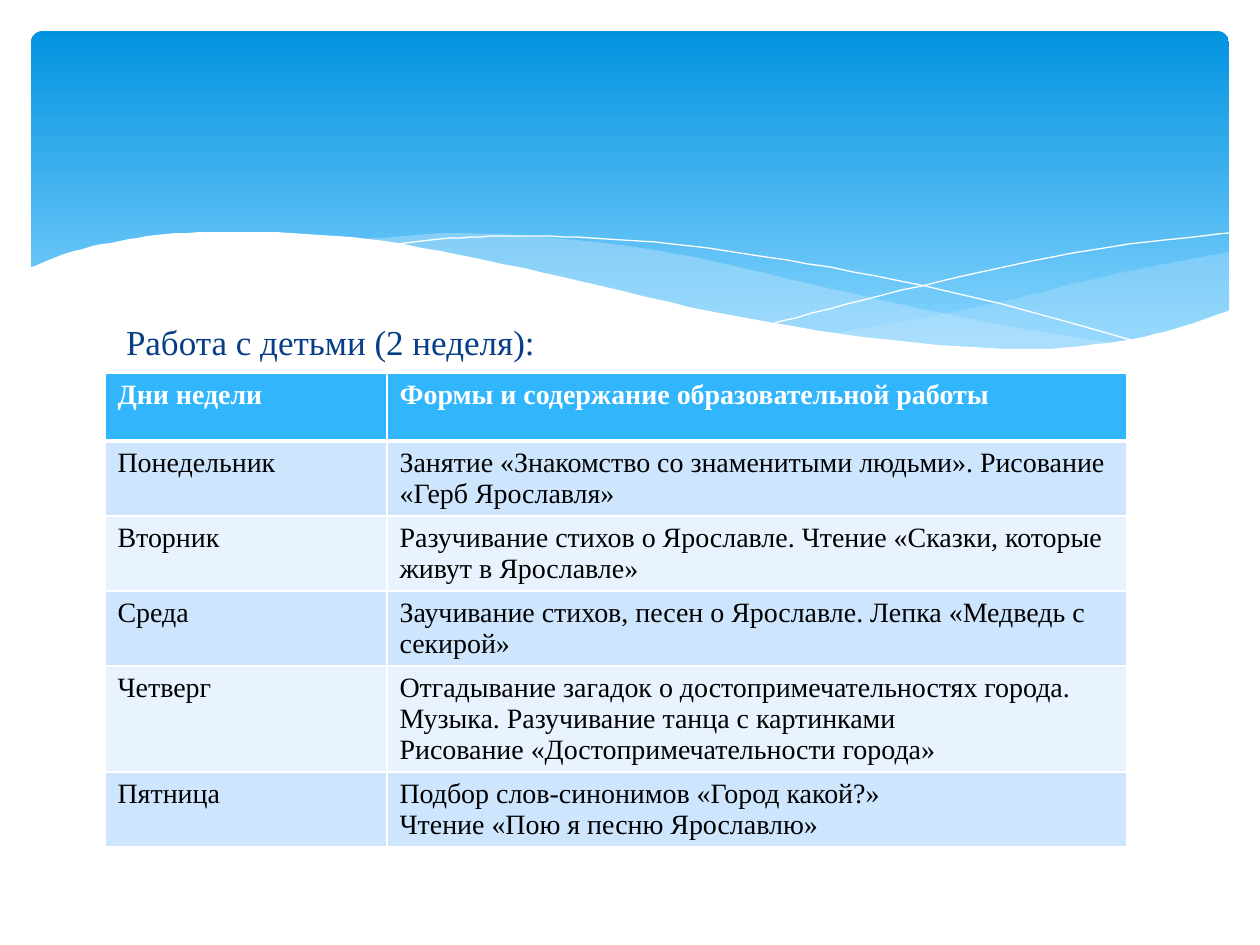
from lxml import etree
from pptx import Presentation
from pptx import util as u
from pptx.dml.color import RGBColor
from pptx.enum import shapes, text
from pptx.oxml import ns

SCALE = 914400 / 126  # EMU per px
FONT = "Times New Roman"
WHITE = RGBColor(0xFF, 0xFF, 0xFF)
BLACK = RGBColor(0x00, 0x00, 0x00)
NAVY = RGBColor(0x07, 0x3E, 0x87)
SKY_TOP = RGBColor(0x02, 0x93, 0xE0)
SKY_BOTTOM = RGBColor(0x83, 0xD3, 0xFE)
MIST = RGBColor(0xC6, 0xE7, 0xFC)
HEADER = RGBColor(0x31, 0xB6, 0xFD)
BANDS = (RGBColor(0xCE, 0xE5, 0xFE), RGBColor(0xE8, 0xF3, 0xFF))

# Points that each curve passes through, in px
RIGHT_WAVE = [(1229, 252), (1160, 265), (1085, 281), (1014, 299), (919, 319), (833, 334),
              (888, 341), (954, 348), (1012, 350), (1076, 348), (1140, 339), (1196, 324),
              (1230, 311)]
MIDDLE_WAVE = [(1125, 344), (1055, 334), (976, 320), (890, 302), (793, 280), (717, 262),
               (648, 249), (586, 241), (529, 236), (455, 233), (394, 237), (360, 241),
               (431, 251), (509, 266), (566, 280), (668, 302), (757, 321), (838, 335),
               (910, 345), (974, 349), (1031, 350), (1080, 349), (1125, 344)]
FALLING_LINE = [(389, 246), (422, 241), (471, 237), (524, 236), (591, 238), (672, 244),
                (766, 257), (876, 276), (1002, 304), (1143, 343)]
RISING_LINE = [(772, 324), (847, 304), (942, 281), (1053, 257), (1147, 242), (1229, 233)]
WHITE_WAVE = [(1231, 310), (1184, 326), (1133, 339), (1071, 347), (1019, 349), (937, 345),
              (842, 334), (730, 315), (634, 294), (563, 277), (460, 255), (368, 239),
              (290, 233), (223, 232), (166, 234), (120, 241), (74, 251), (29, 268)]

COLUMN_WIDTHS = [282, 740]
ROW_HEIGHTS = [68, 75, 75, 75, 106, 75]
ROWS = [
    ("Дни недели", "Формы и содержание образовательной работы"),
    ("Понедельник", "Занятие «Знакомство со знаменитыми людьми». Рисование «Герб Ярославля»"),
    ("Вторник", "Разучивание стихов о Ярославле. Чтение «Сказки, которые живут в Ярославле»"),
    ("Среда", "Заучивание стихов, песен о Ярославле. Лепка «Медведь с секирой»"),
    ("Четверг", "Отгадывание загадок о достопримечательностях города.\n"
                "Музыка. Разучивание танца с картинками\n"
                "Рисование «Достопримечательности города»"),
    ("Пятница", "Подбор слов-синонимов «Город какой?»\nЧтение «Пою я песню Ярославлю»"),
]


def px(value):
    return u.Emu(round(value * SCALE))


def smooth(points, steps=5):
    """Points along a Catmull-Rom curve through the given points."""
    padded = [points[0], *points, points[-1]]
    curve = [points[0]]
    for a, b, c, d in zip(padded, padded[1:], padded[2:], padded[3:]):
        for step in range(1, steps + 1):
            t = step / steps
            curve.append(tuple(
                (2 * q + (r - p) * t + (2 * p - 5 * q + 4 * r - s) * t ** 2
                 + (3 * q - p - 3 * r + s) * t ** 3) / 2
                for p, q, r, s in zip(a, b, c, d)))
    return curve


def write(frame, content, size=16, color=BLACK, bold=False, space_before=0):
    frame.text = content
    for paragraph in frame.paragraphs:
        paragraph.alignment = text.PP_ALIGN.LEFT
        paragraph.space_before = u.Pt(space_before)
        for run in paragraph.runs:
            run.font.name = FONT
            run.font.size = u.Pt(size)
            run.font.bold = bold
            run.font.color.rgb = color


def set_borders(cell, bottom=1, top=1):
    properties = cell._tc.get_or_add_tcPr()
    for side, width in (("lnL", 1), ("lnR", 1), ("lnT", top), ("lnB", bottom)):
        line = etree.SubElement(properties, ns.qn(f"a:{side}"), w=str(u.Pt(width)))
        fill = etree.SubElement(line, ns.qn("a:solidFill"))
        etree.SubElement(fill, ns.qn("a:srgbClr"), val=str(WHITE))


class SlideBuilder:
    def __init__(self, slide):
        self.slide = slide

    def banner(self, left, top, width, height):
        shape = self.slide.shapes.add_shape(
            shapes.MSO_SHAPE.ROUNDED_RECTANGLE, px(left), px(top), px(width), px(height))
        shape.adjustments[0] = 0.034
        shape.shadow.inherit = False
        shape.line.fill.background()
        shape.fill.gradient()
        shape.fill.gradient_angle = 270
        stops = zip(shape.fill.gradient_stops, (SKY_TOP, SKY_BOTTOM), (0, 0.9))
        for stop, color, position in stops:
            stop.color.rgb = color
            stop.position = position

    def outline(self, points, close):
        builder = self.slide.shapes.build_freeform(*points[0], scale=SCALE)
        builder.add_line_segments(points[1:], close=close)
        shape = builder.convert_to_shape()
        shape.shadow.inherit = False
        return shape

    def wave(self, points, color, opacity=100):
        shape = self.outline(points, close=True)
        shape.line.fill.background()
        shape.fill.solid()
        shape.fill.fore_color.rgb = color
        if opacity < 100:
            fill_color = shape._element.spPr.find(".//" + ns.qn("a:srgbClr"))
            etree.SubElement(fill_color, ns.qn("a:alpha"), val=str(opacity * 1000))

    def curve(self, points):
        shape = self.outline(points, close=False)
        shape.fill.background()
        shape.line.color.rgb = WHITE
        shape.line.width = 0

    def title(self, content, left, top, width, height):
        shape = self.slide.shapes.title
        shape.left, shape.top, shape.width, shape.height = map(px, (left, top, width, height))
        frame = shape.text_frame
        frame.word_wrap = True
        frame.auto_size = text.MSO_AUTO_SIZE.NONE
        frame.vertical_anchor = text.MSO_ANCHOR.TOP
        frame.margin_left = px(21)
        write(frame, content, size=20, color=NAVY, space_before=4)
        # Bring the heading in front of the waves
        self.slide.shapes._spTree.append(shape._element)

    def table(self, rows, left, top, widths, heights):
        table = self.slide.shapes.add_table(
            len(rows), len(widths), px(left), px(top), px(sum(widths)), px(sum(heights))).table
        for column, width in zip(table.columns, widths):
            column.width = px(width)
        for index, (row, height, values) in enumerate(zip(table.rows, heights, rows)):
            row.height = px(height)
            is_header = index == 0
            for cell, value in zip(row.cells, values):
                set_borders(cell, bottom=3 if is_header else 1, top=3 if index == 1 else 1)
                cell.fill.solid()
                cell.fill.fore_color.rgb = HEADER if is_header else BANDS[(index - 1) % 2]
                write(cell.text_frame, value, color=WHITE if is_header else BLACK,
                      bold=is_header)


def main():
    presentation = Presentation()
    presentation.slide_width, presentation.slide_height = px(1260), px(945)
    slide = presentation.slides.add_slide(presentation.slide_layouts[5])
    builder = SlideBuilder(slide)

    # Sky banner with waves
    builder.banner(31, 31, 1198, 340)
    builder.wave(smooth(RIGHT_WAVE), MIST, opacity=29)
    builder.wave(smooth(MIDDLE_WAVE), MIST, opacity=40)
    builder.curve(smooth(FALLING_LINE))
    builder.curve(smooth(RISING_LINE))
    builder.wave(smooth(WHITE_WAVE) + [(29, 415), (1231, 415)], WHITE)

    # Heading and weekly plan
    builder.title("Работа с детьми (2 неделя):", 105, 314, 1032, 110)
    builder.table(ROWS, 105, 373, COLUMN_WIDTHS, ROW_HEIGHTS)

    presentation.save("out.pptx")


if __name__ == "__main__":
    main()
